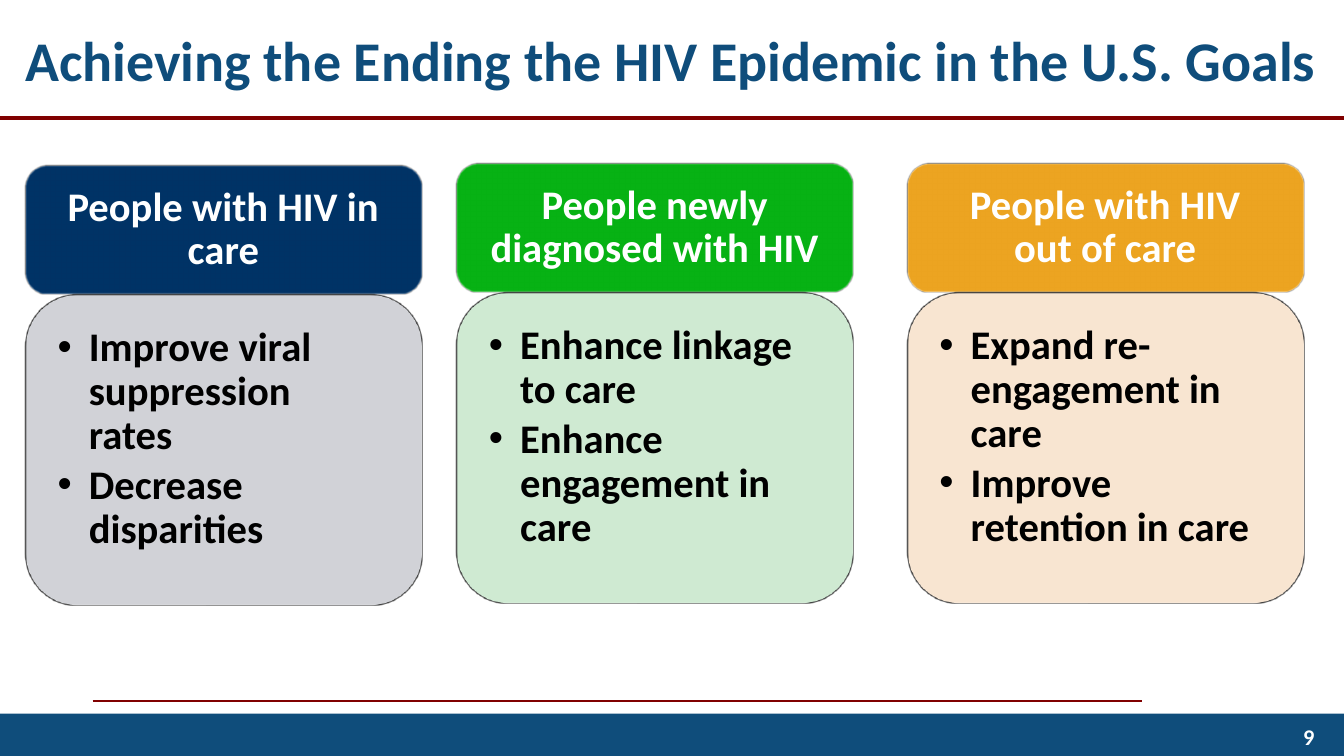
from dataclasses import dataclass

from lxml import etree
from pptx import Presentation
from pptx import util as u
from pptx.dml.color import RGBColor
from pptx.enum import shapes, text
from pptx.oxml.ns import qn


@dataclass(frozen=True)
class Theme:
    font: str = "Calibri"
    blue: str = "0F4D7B"
    rule: str = "800000"
    edge: str = "000000"
    dark: str = "000000"
    light: str = "FFFFFF"
    title_size: int = 40
    card_size: int = 29
    number_size: int = 16


THEME = Theme()
WIDTH, HEIGHT = u.Inches(13.33), u.Inches(7.5)
CARD_COLS, HEADING_ROWS, GOALS_ROWS = 29.48, 17.07, 41.07
HEADING_INSETS = (0.23, 0.13, 0.23, 0.13)
GOALS_INSETS = (0.17, 0.17, 0.23, 0.25)
# left column, top row, heading, heading fill, goals, goals fill
CARDS = [
    (1.88, 21.87, "People with HIV in care", "003366",
     ["Improve viral suppression rates", "Decrease disparities"], "CCCED3"),
    (33.98, 21.6, "People newly diagnosed with HIV", "07B214",
     ["Enhance linkage to care", "Enhance engagement in care"], "CAE8CE"),
    (67.5, 21.6, "People with HIV out of care", "ECA421",
     ["Expand re-engagement in care", "Improve retention in care"], "F8E3CD"),
]


def grid(left, top, width, height):
    """Turn columns and rows of a 100 by 100 grid into slide lengths."""
    return (int(WIDTH * left / 100), int(HEIGHT * top / 100),
            int(WIDTH * width / 100), int(HEIGHT * height / 100))


def add_bullet(paragraph, indent=u.Inches(0.31)):
    props = paragraph._p.get_or_add_pPr()
    props.set("marL", str(indent))
    props.set("indent", str(-indent))
    etree.SubElement(props, qn("a:buFont"), typeface="Arial")
    etree.SubElement(props, qn("a:buChar"), char="•")


def write(holder, *lines, size, color, align=text.PP_ALIGN.LEFT,
          anchor=text.MSO_ANCHOR.MIDDLE, insets=(0.1, 0.05, 0.1, 0.05),
          spacing=1.0, after=0, bullets=False):
    frame = holder.text_frame
    frame.word_wrap = True
    frame.auto_size = text.MSO_AUTO_SIZE.NONE
    frame.vertical_anchor = anchor
    (frame.margin_left, frame.margin_top,
     frame.margin_right, frame.margin_bottom) = map(u.Inches, insets)
    frame.text = "\n".join(lines)
    for paragraph in frame.paragraphs:
        paragraph.alignment = align
        paragraph.line_spacing = spacing
        paragraph.space_before = u.Pt(0)
        paragraph.space_after = u.Pt(after)
        if bullets:
            add_bullet(paragraph)
        font = paragraph.font
        font.name, font.size, font.bold = THEME.font, u.Pt(size), True
        font.color.rgb = RGBColor.from_string(color)


def add_panel(slide, kind, place, fill):
    panel = slide.shapes.add_shape(kind, *grid(*place))
    panel.shadow.inherit = False
    panel.fill.solid()
    panel.fill.fore_color.rgb = RGBColor.from_string(fill)
    panel.line.fill.background()
    return panel


def add_soft_card(slide, place, fill, opacity=100):
    """Add a rounded panel whose outline fades into the background."""
    card = add_panel(slide, shapes.MSO_SHAPE.ROUNDED_RECTANGLE, place, fill)
    card.line.color.rgb = RGBColor.from_string(THEME.edge)
    card.line.width = u.Pt(1)
    props = card._element.spPr
    if opacity < 100:
        color = props.find(qn("a:solidFill"))[0]
        etree.SubElement(color, qn("a:alpha"), val=str(opacity * 1000))
    etree.SubElement(props.find(qn("a:effectLst")), qn("a:softEdge"),
                     rad=str(u.Pt(1)))
    return card


def add_rule(slide, start, end, row, weight):
    left, y, right, _ = grid(start, row, end, 0)
    rule = slide.shapes.add_connector(
        shapes.MSO_CONNECTOR.STRAIGHT, left, y, right, y)
    rule.line.color.rgb = RGBColor.from_string(THEME.rule)
    rule.line.width = u.Pt(weight)
    etree.SubElement(rule._element.spPr, qn("a:effectLst"))


def add_goal_card(slide, left, top, heading, heading_fill, goals, goals_fill):
    heading_card = add_soft_card(
        slide, (left, top, CARD_COLS, HEADING_ROWS), heading_fill)
    write(heading_card, heading, size=THEME.card_size, color=THEME.light,
          align=text.PP_ALIGN.CENTER, insets=HEADING_INSETS, spacing=0.9)
    goals_card = add_soft_card(
        slide, (left, top + HEADING_ROWS, CARD_COLS, GOALS_ROWS),
        goals_fill, opacity=90)
    write(goals_card, *goals, size=THEME.card_size, color=THEME.dark,
          anchor=text.MSO_ANCHOR.TOP, insets=GOALS_INSETS, spacing=0.9,
          after=4.3, bullets=True)


def add_title(slide, wording):
    title = slide.shapes.title
    title.left, title.top, title.width, title.height = grid(
        1.13, 0, 98.87, 15.6)
    write(title, wording, size=THEME.title_size, color=THEME.blue)


def add_page_number(slide, number):
    page = slide.shapes.add_textbox(*grid(76.05, 94.67, 22.5, 5.6))
    write(page, number, size=THEME.number_size, color=THEME.light,
          align=text.PP_ALIGN.RIGHT)


def main():
    deck = Presentation()
    deck.slide_width, deck.slide_height = WIDTH, HEIGHT
    slide = deck.slides.add_slide(deck.slide_layouts[5])
    add_rule(slide, 6.9, 85, 92.67, weight=1.5)
    add_panel(slide, shapes.MSO_SHAPE.RECTANGLE, (0, 94.4, 100, 5.6),
              THEME.blue)
    add_rule(slide, 0, 100, 15.6, weight=3)
    for card in CARDS:
        add_goal_card(slide, *card)
    add_page_number(slide, "9")
    add_title(slide, "Achieving the Ending the HIV Epidemic in the U.S. Goals")
    deck.save("out.pptx")


if __name__ == "__main__":
    main()
